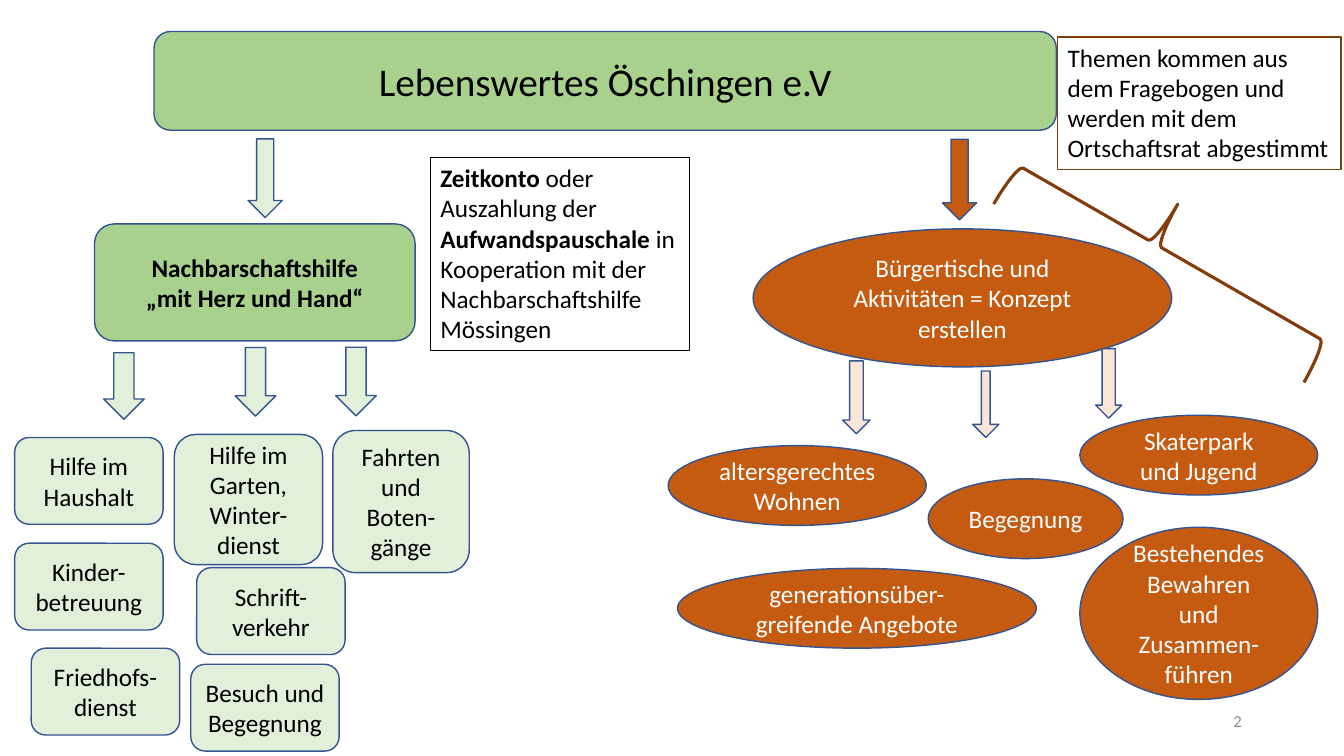
import pptx
import pptx.util
import pptx.dml.color
import pptx.enum.shapes
import pptx.enum.text

Pt = pptx.util.Pt
SHAPE = pptx.enum.shapes.MSO_SHAPE
ALIGN = pptx.enum.text.PP_ALIGN
ANCHOR = pptx.enum.text.MSO_ANCHOR
AUTO = pptx.enum.text.MSO_AUTO_SIZE

BLACK, WHITE, GREY = "000000", "FFFFFF", "8C8C8C"
GREEN, PALE_GREEN = "A9D18E", "E2F0D9"
ORANGE, PALE_ORANGE = "C55A11", "FBE5D6"
BLUE, BROWN = "325491", "843C0B"


def rgb(value):
    return pptx.dml.color.RGBColor.from_string(value)


class Builder:
    font = {"name": "Calibri", "size": Pt(18), "bold": False}

    def __init__(self, s):
        self.s = s

    def label(self, sp, paragraphs, color, align, anchor, **fmt):
        tf = sp.text_frame
        tf.word_wrap = True
        tf.vertical_anchor = anchor
        for i, runs in enumerate(paragraphs):
            p = tf.add_paragraph() if i else tf.paragraphs[0]
            p.alignment = align
            for text, bold in runs:
                r = p.add_run()
                r.text = text
                for key, value in {**self.font, "bold": bold, **fmt}.items():
                    setattr(r.font, key, value)
                r.font.color.rgb = rgb(color)

    def shape(self, kind, at, fill, line=BLUE, width=1, adjust=()):
        sp = self.s.shapes.add_shape(kind, *[Pt(v) for v in at])
        sp.shadow.inherit = False
        sp.fill.solid()
        sp.fill.fore_color.rgb = rgb(fill)
        sp.line.color.rgb = rgb(line)
        sp.line.width = Pt(width)
        for i, value in enumerate(adjust):
            sp.adjustments[i] = value
        return sp

    def box(self, at, lines, fill=PALE_GREEN, bold=False, **fmt):
        sp = self.shape(SHAPE.ROUNDED_RECTANGLE, at, fill)
        paragraphs = [[(text, bold)] for text in lines]
        self.label(sp, paragraphs, BLACK, ALIGN.CENTER, ANCHOR.MIDDLE, **fmt)

    def ellipse(self, at, text):
        sp = self.shape(SHAPE.OVAL, at, ORANGE)
        self.label(sp, [[(text, False)]], WHITE, ALIGN.CENTER, ANCHOR.MIDDLE)

    def arrow(self, at, fill, adjust=()):
        self.shape(SHAPE.DOWN_ARROW, at, fill, adjust=adjust)

    def note(self, at, runs, line):
        sp = self.shape(SHAPE.RECTANGLE, at, WHITE, line)
        self.label(sp, [runs], BLACK, ALIGN.LEFT, ANCHOR.TOP)
        sp.text_frame.auto_size = AUTO.SHAPE_TO_FIT_TEXT

    def brace(self, at, rotation, adjust):
        sp = self.shape(SHAPE.RIGHT_BRACE, at, WHITE, BROWN, 2.25, adjust)
        sp.rotation = rotation

    def page_number(self, at, text):
        sp = self.s.shapes.add_textbox(*[Pt(v) for v in at])
        self.label(sp, [[(text, False)]], GREY, ALIGN.RIGHT, ANCHOR.MIDDLE,
                   size=Pt(12))


def main():
    prs = pptx.Presentation()
    prs.slide_width, prs.slide_height = Pt(960), Pt(540)
    b = Builder(prs.slides.add_slide(prs.slide_layouts[6]))

    b.brace((804.2, 53.3, 65.5, 255.6), 299.9, (0.083, 0.446))
    b.box((110, 22.5, 644.5, 70.5), ["Lebenswertes Öschingen e.V"], GREEN,
          size=Pt(28))
    b.box((67.5, 160, 229, 83.5),
          ["Nachbarschaftshilfe", "„mit Herz und Hand“"], GREEN, bold=True)

    b.note((307.5, 112.5, 185, 138), [
        ("Zeitkonto", True),
        (" oder Auszahlung der ", False),
        ("Aufwandspauschale", True),
        (" in Kooperation mit der Nachbarschaftshilfe Mössingen", False),
    ], BLACK)
    b.note((755.5, 26.5, 202.5, 94.5), [
        ("Themen kommen aus dem Fragebogen und werden mit dem "
         "Ortschaftsrat abgestimmt", False),
    ], BROWN)

    for x, y, w, h, text in (
        (10.5, 312.5, 106, 62, "Hilfe im Haushalt"),
        (124.5, 310.3, 106, 93, "Hilfe im Garten, Winter-dienst"),
        (237.8, 307.5, 97.4, 101.5, "Fahrten und Boten-gänge"),
        (10.5, 388, 106, 62, "Kinder-betreuung"),
        (140.5, 405.5, 106, 62, "Schrift-verkehr"),
        (22.3, 463, 106, 62, "Friedhofs-dienst"),
        (136.3, 474.5, 106, 62, "Besuch und Begegnung"),
    ):
        b.box((x, y, w, h), [text])

    for x, y, w, h, text in (
        (538, 163.5, 299, 98.6, "Bürgertische und Aktivitäten = Konzept erstellen"),
        (477.3, 318.3, 184.3, 57, "altersgerechtes Wohnen"),
        (663, 342, 139.2, 57, "Begegnung"),
        (771.3, 296.6, 170, 57, "Skaterpark und Jugend"),
        (484, 406, 256.3, 57, "generationsüber-greifende Angebote"),
        (771.3, 376.6, 170, 123, "Bestehendes Bewahren und Zusammen-führen"),
    ):
        b.ellipse((x, y, w, h), text)

    for x, y, w, h, fill, adjust in (
        (177.2, 99.2, 24.5, 56.2, PALE_GREEN, ()),
        (74, 252, 29, 47.5, PALE_GREEN, ()),
        (168, 248.2, 29, 49, PALE_GREEN, ()),
        (239.8, 248, 29, 49, PALE_GREEN, ()),
        (673.2, 99.5, 24.5, 57.6, ORANGE, ()),
        (602, 257.8, 19.5, 52, PALE_ORANGE, ()),
        (694.8, 265, 18.7, 47.5, PALE_ORANGE, (0.334, 0.5)),
        (782.6, 249, 18.7, 49.7, PALE_ORANGE, ()),
    ):
        b.arrow((x, y, w, h), fill, adjust)

    b.page_number((678.2, 500.4, 216, 28.8), "2")
    prs.save("out.pptx")


if __name__ == "__main__":
    main()
